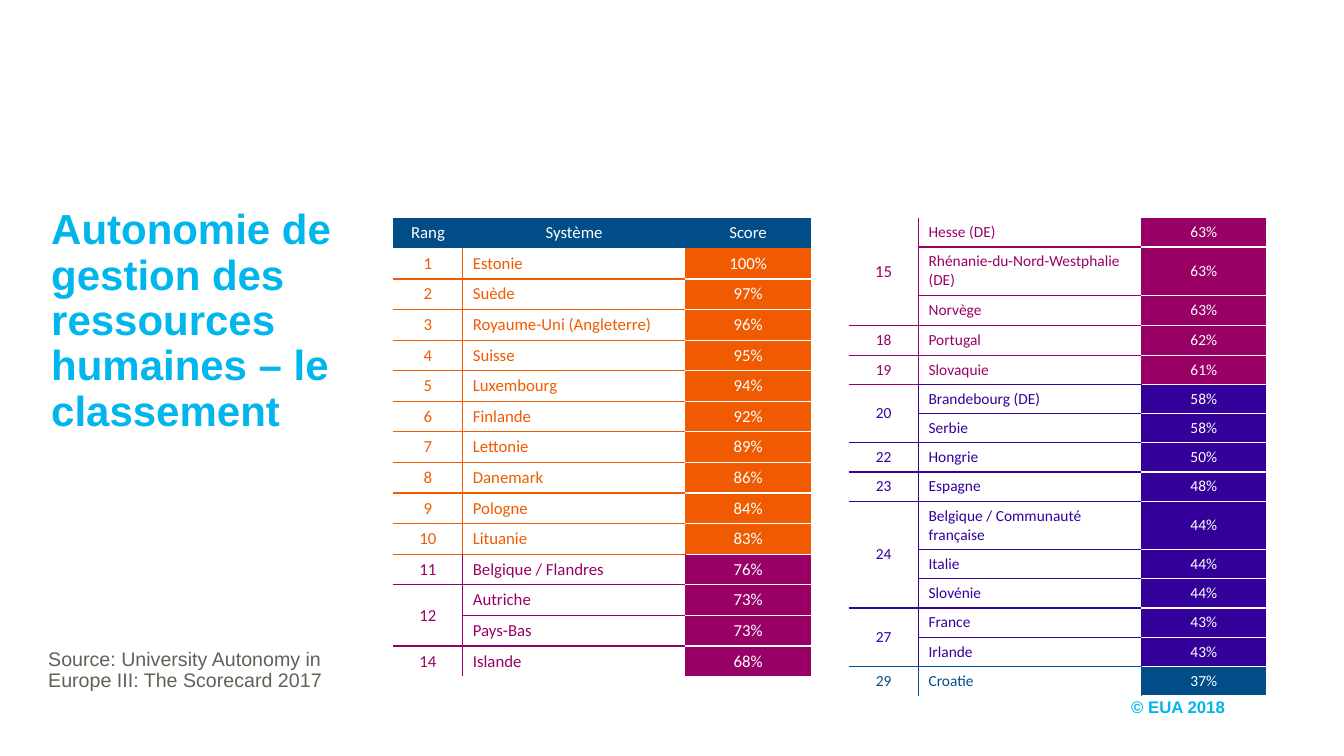
"""Build the ranking slide on autonomy in human resources management."""
from dataclasses import dataclass

from lxml import etree
from pptx import Presentation
from pptx.dml.color import RGBColor
from pptx.enum import text as t
from pptx.oxml import ns
from pptx.util import Inches, Pt

WHITE, NAVY, CYAN, GREY = "FFFFFF", "004D88", "00B6ED", "645F57"
ORANGE, PURPLE, INDIGO, BLUE = "F05B01", "990066", "330099", "005193"
NO_GRID_STYLE = "{2D5ABB26-0587-4C30-8999-92F81FD0307C}"
COLUMN_WIDTHS = (0.69, 2.21, 1.24)
HEADINGS = ("Rang", "Système", "Score")
CENTER, LEFT = t.PP_ALIGN.CENTER, t.PP_ALIGN.LEFT


@dataclass(frozen=True)
class Group:
    """Systems that share one rank and one score."""
    rank: str
    score: str
    colour: str
    systems: tuple[str, ...]
    rank_rule: str = ""
    name_rule: str = ""
    rank_size: int = 0


@dataclass(frozen=True)
class Ranking:
    """One table of ranked groups."""
    left: float
    size: int
    row_height: float
    groups: tuple[Group, ...]
    headings: tuple[str, ...] = ()
    tall_rows: tuple[int, ...] = ()
    score_inset: float = 0.1


@dataclass(frozen=True)
class Caption:
    """One free text box."""
    content: str
    box: tuple[float, float, float, float]
    size: int
    colour: str
    bold: bool = False
    spacing: float = 1.0
    anchor: t.MSO_ANCHOR = t.MSO_ANCHOR.TOP


RANKINGS = (
    Ranking(3.9, 12, 0.3, (
        Group("1", "100%", ORANGE, ("Estonie",)),
        Group("2", "97%", ORANGE, ("Suède",)),
        Group("3", "96%", ORANGE, ("Royaume-Uni (Angleterre)",)),
        Group("4", "95%", ORANGE, ("Suisse",)),
        Group("5", "94%", ORANGE, ("Luxembourg",)),
        Group("6", "92%", ORANGE, ("Finlande",)),
        Group("7", "89%", ORANGE, ("Lettonie",)),
        Group("8", "86%", ORANGE, ("Danemark",)),
        Group("9", "84%", ORANGE, ("Pologne",)),
        Group("10", "83%", ORANGE, ("Lituanie",)),
        Group("11", "76%", PURPLE, ("Belgique / Flandres",)),
        Group("12", "73%", PURPLE, ("Autriche", "Pays-Bas")),
        Group("14", "68%", PURPLE, ("Islande",), WHITE, WHITE),
    ), HEADINGS),
    Ranking(8.42, 11, 0.29, (
        Group("15", "63%", PURPLE,
              ("Hesse (DE)", "Rhénanie-du-Nord-Westphalie (DE)", "Norvège"), rank_size=12),
        Group("18", "62%", PURPLE, ("Portugal",)),
        Group("19", "61%", PURPLE, ("Slovaquie",), name_rule=INDIGO),
        Group("20", "58%", INDIGO, ("Brandebourg (DE)", "Serbie")),
        Group("22", "50%", INDIGO, ("Hongrie",)),
        Group("23", "48%", INDIGO, ("Espagne",)),
        Group("24", "44%", INDIGO,
              ("Belgique / Communauté française", "Italie", "Slovénie")),
        Group("27", "43%", INDIGO, ("France", "Irlande"), BLUE, BLUE),
        Group("29", "37%", NAVY, ("Croatie",), WHITE, WHITE),
    ), tall_rows=(1, 9), score_inset=0.01),
)
CAPTIONS = (
    Caption("© EUA 2018", (11.12, 6.81, 1.13, 0.4), 12, CYAN, True,
            anchor=t.MSO_ANCHOR.MIDDLE),
    Caption("Autonomie de gestion des ressources humaines – le classement",
            (0.41, 2.02, 3.26, 3.32), 30, CYAN, True, 0.9),
    Caption("Source: University Autonomy in Europe III: The Scorecard 2017",
            (0.38, 6.39, 3.14, 0.91), 14, GREY, spacing=0.9),
)


def rgb(colour: str) -> RGBColor:
    """Turn a hex string into a colour."""
    return RGBColor.from_string(colour)


def style_paragraph(para, name: str, size: int, colour: str, bold: bool = False) -> None:
    """Set the font of a whole paragraph."""
    font = para.font
    font.name, font.size, font.bold = name, Pt(size), bold
    font.color.rgb = rgb(colour)


def draw_borders(cell, borders: dict[str, str]) -> None:
    """Draw one-point cell borders, keyed by side in schema order."""
    properties = cell._tc.get_or_add_tcPr()
    for side, colour in borders.items():
        line = etree.SubElement(properties, ns.qn(f"a:ln{side}"), w="12700")
        fill = etree.SubElement(line, ns.qn("a:solidFill"))
        etree.SubElement(fill, ns.qn("a:srgbClr"), val=colour)


def fill_cell(cell, content: str, size: int, colour: str, back: str,
              align: t.PP_ALIGN, borders: dict[str, str]) -> None:
    """Write and style one table cell."""
    draw_borders(cell, borders)
    cell.fill.solid()
    cell.fill.fore_color.rgb = rgb(back)
    cell.vertical_anchor = t.MSO_ANCHOR.MIDDLE
    para = cell.text_frame.paragraphs[0]
    para.text, para.alignment = content, align
    style_paragraph(para, "Calibri", size, colour)


def draw_group(table, first: int, group: Group, ranking: Ranking) -> None:
    """Fill the rows of one rank and merge its rank cells."""
    side = BLUE if group.colour == NAVY else group.colour
    last = len(group.systems) - 1
    for offset, system in enumerate(group.systems):
        row = first + offset
        name_rule = group.name_rule if offset == last else ""
        fill_cell(table.cell(row, 0), "" if offset else group.rank,
                  group.rank_size or ranking.size, group.colour, WHITE, CENTER,
                  {"R": side, "B": group.rank_rule or side})
        fill_cell(table.cell(row, 1), system, ranking.size, group.colour, WHITE, LEFT,
                  {"L": side, "B": name_rule or side})
        score = table.cell(row, 2)
        fill_cell(score, group.score, ranking.size, WHITE, group.colour, CENTER, {"B": WHITE})
        score.margin_left = score.margin_right = Inches(ranking.score_inset)
    if last:
        table.cell(first, 0).merge(table.cell(first + last, 0))


def draw_ranking(page, ranking: Ranking) -> None:
    """Add one ranking table."""
    start = 1 if ranking.headings else 0
    count = start + sum(len(group.systems) for group in ranking.groups)
    frame = page.shapes.add_table(count, len(COLUMN_WIDTHS), Inches(ranking.left), Inches(2.16),
                                  Inches(sum(COLUMN_WIDTHS)), Inches(count * ranking.row_height))
    table = frame.table
    table._tbl.tblPr.find(ns.qn("a:tableStyleId")).text = NO_GRID_STYLE
    table.horz_banding = False
    table.first_row = bool(ranking.headings)
    for column, width in zip(table.columns, COLUMN_WIDTHS):
        column.width = Inches(width)
    for index, row in enumerate(table.rows):
        row.height = Inches(0.48 if index in ranking.tall_rows else ranking.row_height)
    for index, heading in enumerate(ranking.headings):
        fill_cell(table.cell(0, index), heading, ranking.size, WHITE, NAVY, CENTER, {})
    for group in ranking.groups:
        draw_group(table, start, group, ranking)
        start += len(group.systems)


def draw_caption(page, caption: Caption) -> None:
    """Add one text box."""
    box = page.shapes.add_textbox(*map(Inches, caption.box))
    box.text_frame.word_wrap = True
    box.text_frame.vertical_anchor = caption.anchor
    para = box.text_frame.paragraphs[0]
    para.text, para.line_spacing = caption.content, caption.spacing
    style_paragraph(para, "Arial", caption.size, caption.colour, caption.bold)


def main() -> None:
    """Build and save the deck."""
    deck = Presentation()
    deck.slide_width, deck.slide_height = Inches(13.33), Inches(7.5)
    page = deck.slides.add_slide(deck.slide_layouts[6])
    for ranking in RANKINGS:
        draw_ranking(page, ranking)
    for caption in CAPTIONS:
        draw_caption(page, caption)
    deck.save("out.pptx")


if __name__ == "__main__":
    main()
